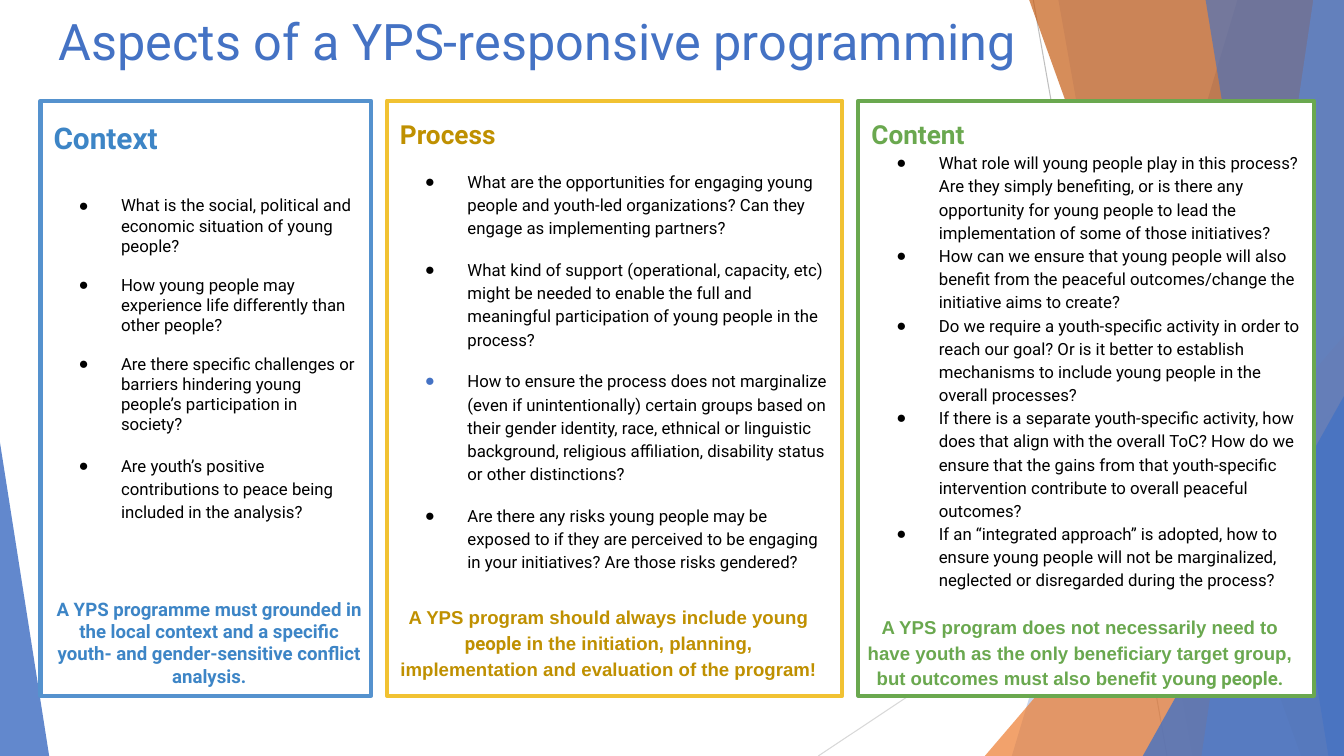
from lxml import etree
from pptx import Presentation
from pptx import util as u
from pptx.dml import color
from pptx.enum import shapes, text
from pptx.oxml import ns


class Theme:
    blue, orange, rust, pale = "4472C4", "ED7D31", "C55A11", "8DA9DB"
    gray, mist, ink, white = "BFBFBF", "D8D8D8", "000000", "FFFFFF"
    sky, gold, green = "3D85C6", "BF9000", "6AA84F"
    sky_edge, gold_edge = "5592CE", "F1C232"
    sans, alt = "Roboto", "Arial"
    title, large, head, note, body = 36, 21.3, 18.7, 13.3, 12


WIDE, HIGH = 33.87, 19.05
TOP, TALL, LEFT, GAP = 2.54, 14.99, 1.02, 0.4

PANELS = [
    dict(wide=8.33, head="Context", size=Theme.large, hue=Theme.sky, edge=Theme.sky_edge,
         first=28.7, gap=13.3, lines=[1, 1, 1, 1.15], dots={}, fill=None,
         items=["What is the social, political and economic situation of young people?",
                "How young people may experience life differently than other people?",
                "Are there specific challenges or barriers hindering young people’s participation in society?",
                "Are youth’s positive contributions to peace being included in the analysis?"],
         box=(0, 12.19, 8.51, 2.74), lead=1,
         note=[("A YPS programme must grounded in the local context and a specific youth- and "
                "gender-sensitive conflict analysis.", Theme.sans)]),
    dict(wide=11.48, head="Process", size=Theme.head, hue=Theme.gold, edge=Theme.gold_edge,
         first=13.3, gap=13.3, lines=[1.15] * 4, dots={2: Theme.blue}, fill=None,
         items=["What are the opportunities for engaging young people and youth-led organizations? "
                "Can they engage as implementing partners?",
                "What kind of support (operational, capacity, etc) might be needed to enable the full "
                "and meaningful participation of young people in the process?",
                "How to ensure the process does not marginalize (even if unintentionally) certain groups "
                "based on their gender identity, race, ethnical or linguistic background, religious "
                "affiliation, disability status or other distinctions?",
                "Are there any risks young people may be exposed to if they are perceived to be engaging "
                "in your initiatives? Are those risks gendered?"],
         box=(-0.15, 12.32, 11.48, 3.23), lead=1.15,
         note=[("A YPS program should always include young ", Theme.alt), ("people", Theme.sans),
               (" in the initiation, planning, implementation and evaluation of the program!", Theme.alt)]),
    dict(wide=11.48, head="Content", size=Theme.head, hue=Theme.green, edge=Theme.green,
         first=0, gap=0, lines=[1.15] * 5, dots={}, fill=Theme.white,
         items=["What role will young people play in this process? Are they simply benefiting, or is there "
                "any opportunity for young people to lead the implementation of some of those initiatives?",
                "How can we ensure that young people will also benefit from the peaceful outcomes/change "
                "the initiative aims to create?",
                "Do we require a youth-specific activity in order to reach our goal? Or is it better to "
                "establish mechanisms to include young people in the overall processes?",
                "If there is a separate youth-specific activity, how does that align with the overall ToC? "
                "How do we ensure that the gains from that youth-specific intervention contribute to "
                "overall peaceful outcomes?",
                "If an “integrated approach” is adopted, how to ensure young people will not be "
                "marginalized, neglected or disregarded during the process?"],
         box=(-0.15, 12.57, 11.48, 4.06), lead=1.15,
         note=[("A YPS program does not necessarily need to have youth as the only beneficiary target "
                "group, but outcomes must also benefit you", Theme.alt), ("ng people.", Theme.sans)]),
]

BANDS = [
    ("quad", (31.19, 25.5), Theme.blue, 29),
    ("quad", (26.67, 30.05), Theme.blue, 20),
    ("tri", (24.82, 8.46, 9.05, 1), Theme.orange, 71),
    ("quad", (25.93, 32.79), Theme.rust, 69),
    ("quad", (33.1, 30.28), Theme.pale, 69),
    ("quad", (30.38, 33.48), Theme.blue, 64),
    ("tri", (28.8, 9.98, 5.07, 1), Theme.blue, 80),
    ("tri", (0, 11.15, 1.24, 0), Theme.blue, 84),
]


def rgb(code):
    return color.RGBColor.from_string(code)


def put(thing, **vals):
    for name, val in vals.items():
        setattr(thing, name, val)


def place(shape, left, top, wide, high):
    put(shape, left=u.Cm(left), top=u.Cm(top), width=u.Cm(wide), height=u.Cm(high))


def frame(shape, anchor=text.MSO_ANCHOR.TOP):
    pad = u.Cm(0.33)
    put(shape.text_frame, word_wrap=True, auto_size=text.MSO_AUTO_SIZE.NONE, vertical_anchor=anchor,
        margin_left=pad, margin_right=pad, margin_top=pad, margin_bottom=pad)
    return shape.text_frame


def write(para, runs, size, hue, bold=False, align=text.PP_ALIGN.LEFT, lead=1.0, before=0):
    put(para, alignment=align, line_spacing=float(lead), space_before=u.Pt(before), space_after=u.Pt(0))
    for words, face in runs:
        run = para.add_run()
        run.text = words
        put(run.font, name=face, size=u.Pt(size), bold=bold)
        run.font.color.rgb = rgb(hue)


def mark(para, dot=None):
    props = para._p.get_or_add_pPr()
    props.set("marL", str(u.Cm(1.7) if dot else 0))
    props.set("indent", str(u.Cm(-1.07) if dot else 0))
    if dot:
        tint = etree.SubElement(props, ns.qn("a:buClr"))
        etree.SubElement(tint, ns.qn("a:srgbClr")).set("val", dot)
        etree.SubElement(props, ns.qn("a:buChar")).set("char", "●")
    else:
        etree.SubElement(props, ns.qn("a:buNone"))


def tint(shape, hue, alpha):
    shape.shadow.inherit = False
    shape.line.fill.background()
    shape.fill.solid()
    shape.fill.fore_color.rgb = rgb(hue)
    code = shape.fill._xPr.find(".//" + ns.qn("a:srgbClr"))
    etree.SubElement(code, ns.qn("a:alpha")).set("val", str(alpha * 1000))


def backdrop(slide, wide, high):
    rays = [((26.04, 0), (29.41, high), Theme.gray), ((wide, 10.24), (20.62, high), Theme.mist)]
    for start, end, hue in rays:
        ray = slide.shapes.add_connector(shapes.MSO_CONNECTOR.STRAIGHT, *map(u.Cm, start + end))
        ray.line.width = u.Pt(0.75)
        ray.line.color.rgb = rgb(hue)
        etree.SubElement(ray._element.spPr, ns.qn("a:effectLst"))
    for kind, spots, hue, alpha in BANDS:
        if kind == "quad":
            head, foot = spots
            path = slide.shapes.build_freeform(u.Cm(head), u.Cm(-0.02))
            ends = [(wide, -0.02), (wide, high), (foot, high)]
            path.add_line_segments([(u.Cm(x), u.Cm(y)) for x, y in ends], close=True)
            shape = path.convert_to_shape()
        else:
            left, top, span, apex = spots
            shape = slide.shapes.add_shape(shapes.MSO_SHAPE.ISOSCELES_TRIANGLE,
                                           *map(u.Cm, (left, top, span, high - top)))
            shape.adjustments[0] = apex
        tint(shape, hue, alpha)


def heading(slide, box):
    title = slide.shapes.title
    slide.shapes._spTree.append(title._element)
    place(title, *box)
    para = frame(title, text.MSO_ANCHOR.MIDDLE).paragraphs[0]
    write(para, [("Aspects of a YPS-responsive programming", Theme.sans)], Theme.title, Theme.blue)


def panel(slide, body, data, box):
    slide.shapes._spTree.append(body._element)
    place(body, *box)
    body.line.width = u.Pt(3)
    body.line.color.rgb = rgb(data["edge"])
    if data["fill"]:
        body.fill.solid()
        body.fill.fore_color.rgb = rgb(data["fill"])
    words = frame(body)
    write(words.paragraphs[0], [(data["head"], Theme.sans)], data["size"], data["hue"], True, lead=1.15)
    mark(words.paragraphs[0])
    for num, (item, lead) in enumerate(zip(data["items"], data["lines"])):
        para = words.add_paragraph()
        write(para, [(item, Theme.sans)], Theme.body, Theme.ink, lead=lead,
              before=data["gap"] if num else data["first"])
        mark(para, data["dots"].get(num, Theme.ink))
    left, top, wide, high = data["box"]
    note = slide.shapes.add_textbox(*map(u.Cm, (box[0] + left, box[1] + top, wide, high)))
    write(frame(note).paragraphs[0], data["note"], Theme.note, data["hue"], True,
          text.PP_ALIGN.CENTER, data["lead"])


def main():
    deck = Presentation()
    put(deck, slide_width=u.Cm(WIDE), slide_height=u.Cm(HIGH))
    slide = deck.slides.add_slide(deck.slide_layouts[4])
    bodies = list(slide.placeholders)[1:]
    spare = bodies.pop()._element
    spare.getparent().remove(spare)
    backdrop(slide, WIDE, HIGH)
    heading(slide, (1.14, -0.05, 31.55, 2.13))
    left = LEFT
    for body, data in zip(bodies, PANELS):
        panel(slide, body, data, (left, TOP, data["wide"], TALL))
        left += data["wide"] + GAP
    deck.save("out.pptx")


if __name__ == "__main__":
    main()
